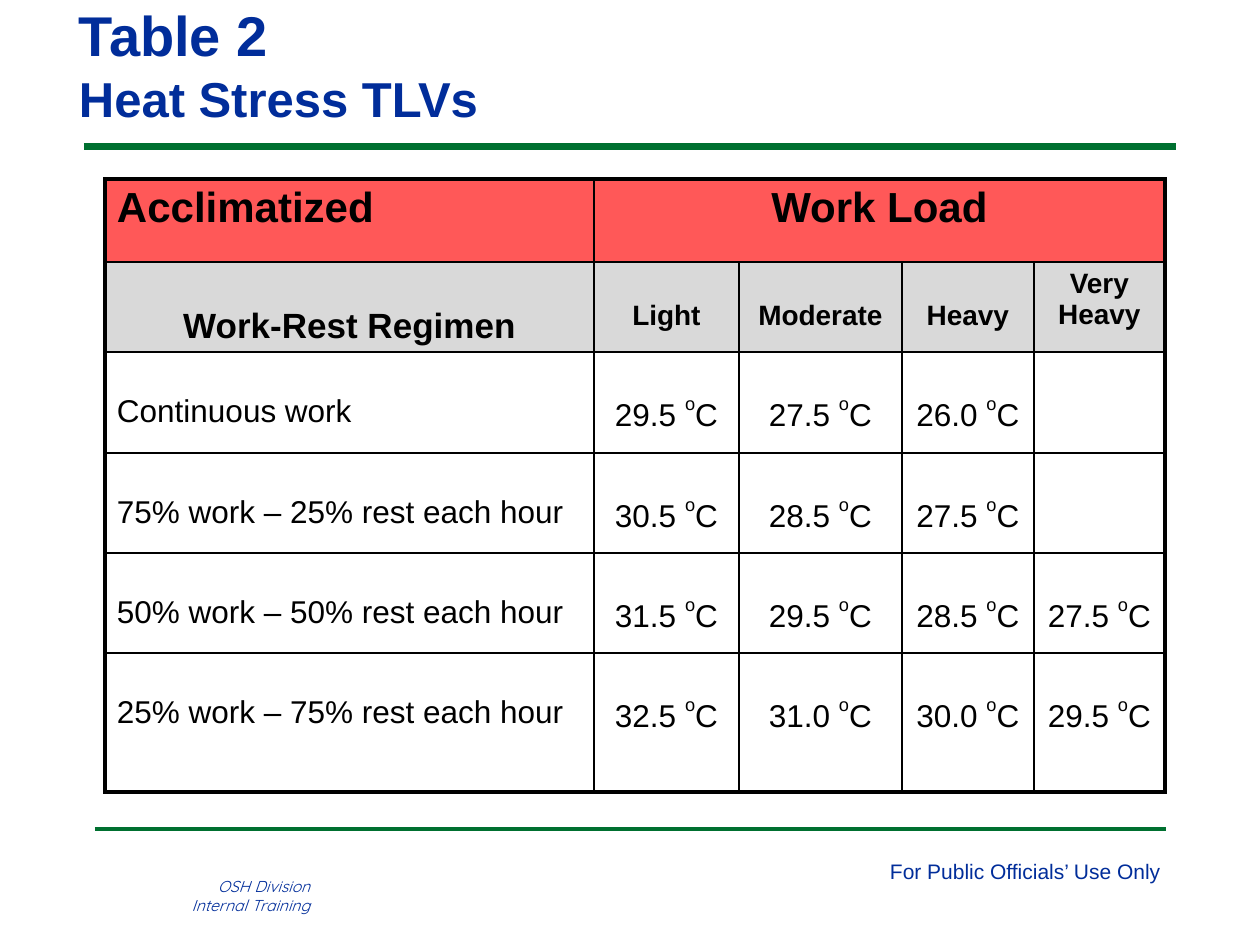
from dataclasses import dataclass

from lxml.etree import SubElement
from pptx import Presentation
from pptx.dml.color import RGBColor
from pptx.enum.shapes import MSO_CONNECTOR
from pptx.enum.text import MSO_ANCHOR, PP_ALIGN
from pptx.oxml.ns import qn
from pptx.util import Emu, Pt

SCALE = 914400 // 126


@dataclass(frozen=True)
class Theme:
    """Colours, type sizes and line widths of the slide."""
    blue: str = "012D9A"
    green: str = "007030"
    black: str = "000000"
    red: str = "FF5858"
    grey: str = "D9D9D9"
    font: str = "Arial"
    footer_font: str = "Quicksand"
    title: int = 32
    subtitle: int = 28
    heading: int = 24
    regimen: int = 20
    load: int = 16
    body: int = 18
    notice: int = 12
    footer: int = 9
    thin: float = 1
    thick: float = 2.25


THEME = Theme()
COLUMNS = [489, 145, 163, 132, 131]
ROWS = [83, 90, 101, 100, 100, 139]
LOADS = ["Light", "Moderate", "Heavy", "Very Heavy"]
LIMITS = [
    ("Continuous work", ["29.5", "27.5", "26.0", ""]),
    ("75% work – 25% rest each hour", ["30.5", "28.5", "27.5", ""]),
    ("50% work – 50% rest each hour", ["31.5", "29.5", "28.5", "27.5"]),
    ("25% work – 75% rest each hour", ["32.5", "31.0", "30.0", "29.5"]),
]


def px(length):
    """Turn pixels into EMU."""
    return Emu(length * SCALE)


def write(para, text, size, color=THEME.black, font=THEME.font, bold=False,
          italic=False, align=PP_ALIGN.LEFT, raised=0):
    """Add one formatted span to a paragraph."""
    para.alignment = align
    span = para.add_run()
    span.text = text
    span.font.size = Pt(size)
    span.font.name = font
    span.font.bold = bold
    span.font.italic = italic
    span.font.color.rgb = RGBColor.from_string(color)
    if raised:
        span.font._element.set("baseline", str(raised * 1000))


def add_box(page, left, top, width, height, wrap=True, insets=(13, 6)):
    """Add an empty text box and return its frame."""
    frame = page.shapes.add_textbox(px(left), px(top), px(width), px(height)).text_frame
    frame.word_wrap = wrap
    frame.margin_left = frame.margin_right = px(insets[0])
    frame.margin_top = frame.margin_bottom = px(insets[1])
    return frame


def add_rule(page, left, top, width, weight):
    """Add a horizontal green rule."""
    rule = page.shapes.add_connector(
        MSO_CONNECTOR.STRAIGHT, px(left), px(top), px(left + width), px(top))
    rule.line.color.rgb = RGBColor.from_string(THEME.green)
    rule.line.width = Pt(weight)
    SubElement(rule._element.spPr, qn("a:effectLst"))


def add_title(page, left, top, width, height):
    """Add the two title lines above their rule."""
    frame = add_box(page, left, top, width, height, insets=(6, 0))
    frame.vertical_anchor = MSO_ANCHOR.BOTTOM
    write(frame.paragraphs[0], "Table 2", THEME.title, THEME.blue, bold=True)
    write(frame.add_paragraph(), "Heat Stress TLVs", THEME.subtitle, THEME.blue, bold=True)
    add_rule(page, left + 11, top + 147, 1092, 4)


def add_footer(page, left, top, width):
    """Add the lower rule with the two footer texts."""
    add_rule(page, left, top, width, 2)
    notice = add_box(page, left + 782, top + 24, 299, 38, wrap=False)
    write(notice.paragraphs[0], "For Public Officials’ Use Only", THEME.notice, THEME.blue)
    unit = add_box(page, left + 53, top + 42, 175, 62, wrap=False)
    for para, text in ((unit.paragraphs[0], "OSH Division"),
                       (unit.add_paragraph(), "Internal Training")):
        write(para, text, THEME.footer, THEME.blue, THEME.footer_font,
              italic=True, align=PP_ALIGN.RIGHT)


def style_cell(cell, row, column, fill):
    """Give a cell its borders and fill."""
    outer = {
        "lnL": column == 0,
        "lnR": column == len(COLUMNS) - 1 or (row == 0 and column > 0),
        "lnT": row == 0,
        "lnB": row == len(ROWS) - 1,
    }
    properties = cell._tc.get_or_add_tcPr()
    for side, is_outer in outer.items():
        weight = THEME.thick if is_outer else THEME.thin
        line = SubElement(properties, qn(f"a:{side}"), w=str(Pt(weight)))
        SubElement(SubElement(line, qn("a:solidFill")), qn("a:srgbClr"), val=THEME.black)
    if fill:
        cell.fill.solid()
        cell.fill.fore_color.rgb = RGBColor.from_string(fill)
    else:
        cell.fill.background()


def fill_cell(cell, text, size, top=6, **style):
    """Write a cell's text a given distance below its upper edge."""
    cell.margin_left = cell.margin_right = px(12)
    cell.margin_top, cell.margin_bottom = px(top), px(2)
    write(cell.text_frame.paragraphs[0], text, size, **style)


def add_limits_table(page, left, top):
    """Add the table of limits by regimen and work load."""
    table = page.shapes.add_table(len(ROWS), len(COLUMNS), px(left), px(top),
                                  px(sum(COLUMNS)), px(sum(ROWS))).table
    table.first_row = table.horz_banding = False
    for column, width in zip(table.columns, COLUMNS):
        column.width = px(width)
    for row, height in zip(table.rows, ROWS):
        row.height = px(height)
    for row in range(len(ROWS)):
        fill = {0: THEME.red, 1: THEME.grey}.get(row)
        for column in range(len(COLUMNS)):
            style_cell(table.cell(row, column), row, column, fill)

    heading = dict(bold=True, align=PP_ALIGN.CENTER)
    table.cell(0, 1).merge(table.cell(0, len(COLUMNS) - 1))
    fill_cell(table.cell(0, 0), "Acclimatized", THEME.heading, bold=True)
    fill_cell(table.cell(0, 1), "Work Load", THEME.heading, **heading)
    fill_cell(table.cell(1, 0), "Work-Rest Regimen", THEME.regimen, top=45, **heading)
    for column, load in enumerate(LOADS, 1):
        gap = 6 if " " in load else 38
        fill_cell(table.cell(1, column), load, THEME.load, top=gap, **heading)

    for row, (regimen, values) in enumerate(LIMITS, 2):
        fill_cell(table.cell(row, 0), regimen, THEME.body, top=42)
        for column, value in enumerate(values, 1):
            if value:
                cell = table.cell(row, column)
                para = cell.text_frame.paragraphs[0]
                fill_cell(cell, f"{value} ", THEME.body, top=42, align=PP_ALIGN.CENTER)
                write(para, "o", THEME.body, align=PP_ALIGN.CENTER, raised=50)
                write(para, "C", THEME.body, align=PP_ALIGN.CENTER)


def main():
    """Build and save the slide."""
    deck = Presentation()
    deck.slide_width, deck.slide_height = px(1260), px(945)
    page = deck.slides.add_slide(deck.slide_layouts[6])
    add_title(page, 73, 0, 1134, 127)
    add_limits_table(page, 105, 179)
    add_footer(page, 95, 829, 1071)
    deck.save("out.pptx")


if __name__ == "__main__":
    main()
